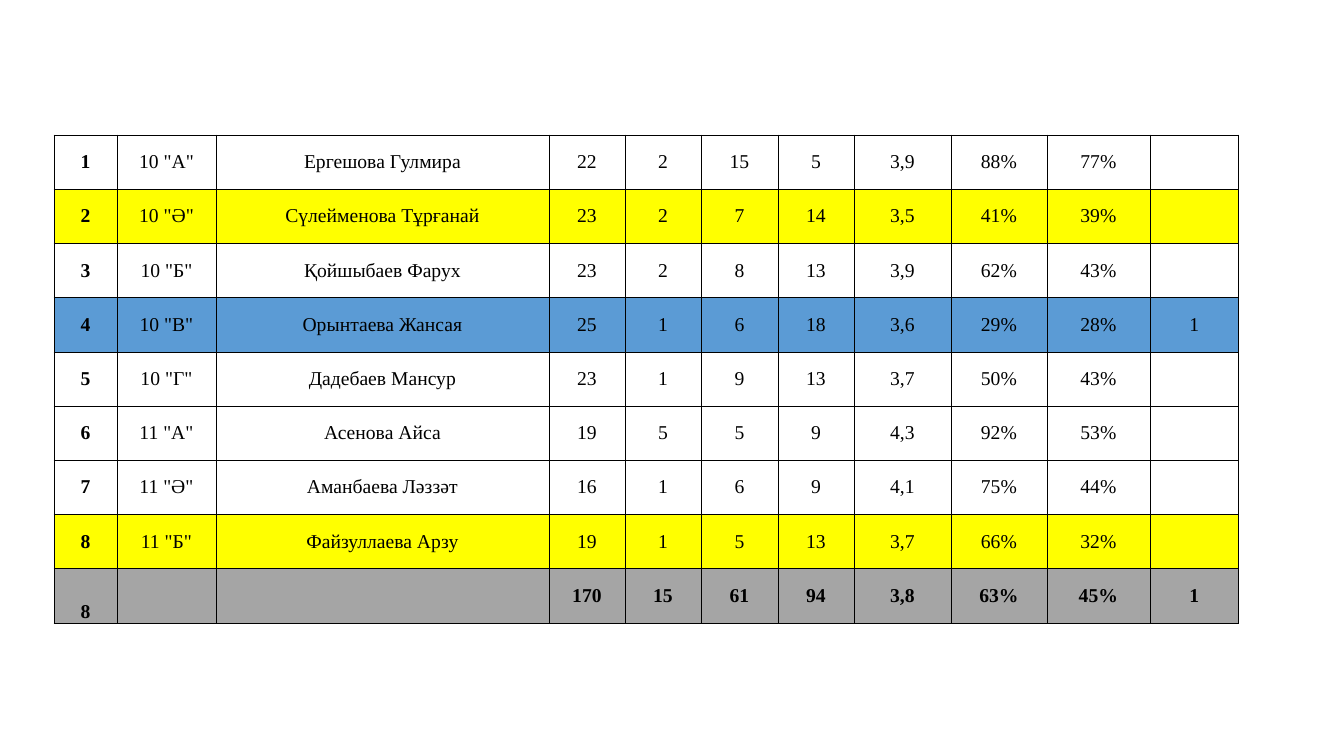
from lxml.etree import SubElement
from pptx import Presentation
from pptx.dml.color import RGBColor
from pptx.enum.text import MSO_ANCHOR, PP_ALIGN
from pptx.oxml.ns import qn
from pptx.util import Emu, Pt

SCALE = 12192000 / 1344
WHITE = RGBColor(0xFF, 0xFF, 0xFF)
BLACK = RGBColor(0x00, 0x00, 0x00)
YELLOW = RGBColor(0xFF, 0xFF, 0x00)
BLUE = RGBColor(0x5B, 0x9B, 0xD5)
GRAY = RGBColor(0xA5, 0xA5, 0xA5)

LEFT, TOP, HEIGHT = 54, 135, 488
WIDTHS = [63, 99, 333, 76, 76, 77, 76, 97, 96, 103, 89]
ROWS = [
    (WHITE, ["1", '10 "А"', "Ергешова Гулмира", "22", "2", "15", "5", "3,9", "88%", "77%", ""]),
    (YELLOW, ["2", '10 "Ә"', "Сүлейменова Тұрғанай", "23", "2", "7", "14", "3,5", "41%", "39%", ""]),
    (WHITE, ["3", '10 "Б"', "Қойшыбаев Фарух", "23", "2", "8", "13", "3,9", "62%", "43%", ""]),
    (BLUE, ["4", '10 "В"', "Орынтаева Жансая", "25", "1", "6", "18", "3,6", "29%", "28%", "1"]),
    (WHITE, ["5", '10 "Г"', "Дадебаев Мансур", "23", "1", "9", "13", "3,7", "50%", "43%", ""]),
    (WHITE, ["6", '11 "А"', "Асенова Айса", "19", "5", "5", "9", "4,3", "92%", "53%", ""]),
    (WHITE, ["7", '11 "Ә"', "Аманбаева Ләззәт", "16", "1", "6", "9", "4,1", "75%", "44%", ""]),
    (YELLOW, ["8", '11 "Б"', "Файзуллаева Арзу", "19", "1", "5", "13", "3,7", "66%", "32%", ""]),
    (GRAY, ["8", "", "", "170", "15", "61", "94", "3,8", "63%", "45%", "1"]),
]


def px(count):
    return Emu(round(count * SCALE))


def add_border(cell, side, width):
    line = SubElement(cell._tc.get_or_add_tcPr(), qn(f"a:ln{side}"), w=str(Pt(width)))
    fill = SubElement(line, qn("a:solidFill"))
    SubElement(fill, qn("a:srgbClr"), val=str(BLACK))


def fill_cell(cell, text, color, bold, last):
    for side in "LRTB":
        add_border(cell, side, 1 if last and side == "R" else 0.5)
    cell.fill.solid()
    cell.fill.fore_color.rgb = color
    cell.margin_left = cell.margin_right = cell.margin_top = cell.margin_bottom = 0
    cell.vertical_anchor = MSO_ANCHOR.MIDDLE
    cell.text = text
    para = cell.text_frame.paragraphs[0]
    para.alignment = PP_ALIGN.CENTER
    font = para.font
    font.name = "Times New Roman"
    font.size = Pt(14)
    font.bold = bold
    font.color.rgb = BLACK


def add_grades(slide):
    frame = slide.shapes.add_table(
        len(ROWS), len(WIDTHS), px(LEFT), px(TOP), px(sum(WIDTHS)), px(HEIGHT))
    table = frame.table
    table.first_row = False
    table.horz_banding = False
    for column, width in zip(table.columns, WIDTHS):
        column.width = px(width)
    for row, (color, texts) in zip(table.rows, ROWS):
        row.height = px(HEIGHT / len(ROWS))
        for index, (cell, text) in enumerate(zip(row.cells, texts)):
            bold = index == 0 or color == GRAY
            fill_cell(cell, text, color, bold, index == len(WIDTHS) - 1)
    table.cell(len(ROWS) - 1, 0).vertical_anchor = MSO_ANCHOR.BOTTOM


def main():
    deck = Presentation()
    deck.slide_width = px(1344)
    deck.slide_height = px(756)
    add_grades(deck.slides.add_slide(deck.slide_layouts[6]))
    deck.save("out.pptx")


if __name__ == "__main__":
    main()
